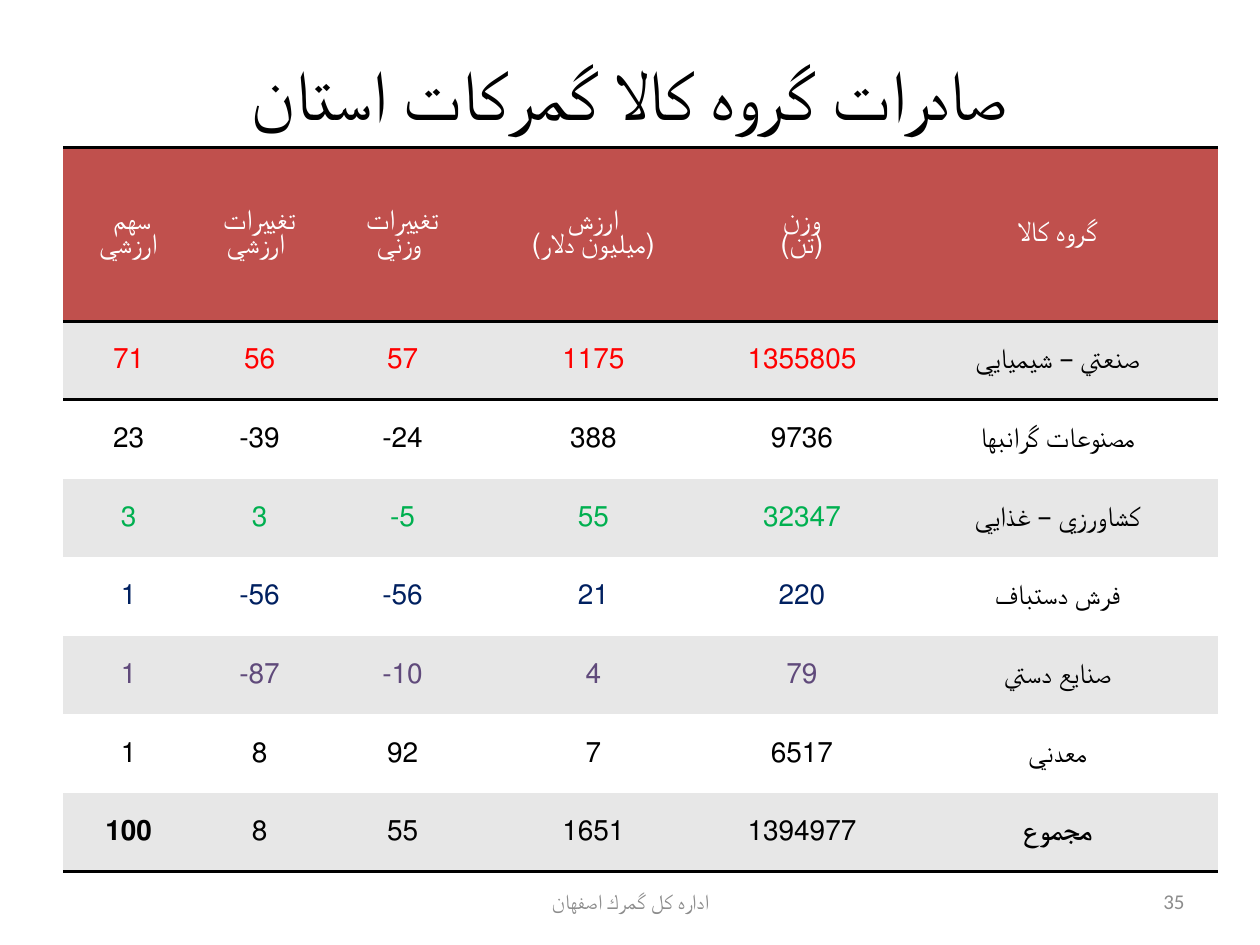
import pptx
import pptx.util
import pptx.dml.color
import pptx.enum.text
import pptx.oxml
import pptx.oxml.ns

Inches = pptx.util.Inches
Pt = pptx.util.Pt
align = pptx.enum.text.PP_ALIGN
middle = pptx.enum.text.MSO_ANCHOR.MIDDLE
ns = pptx.oxml.ns.nsdecls("a")


def paint(hue):
    return pptx.dml.color.RGBColor.from_string(hue)


def style(frame, size, face, hue, side=align.CENTER, rtl=True):
    for para in frame.paragraphs:
        para.alignment = side
        if rtl:
            para._p.get_or_add_pPr().set("rtl", "1")
        for run in para.runs:
            run.font.size = Pt(size)
            run.font.name = face
            run.font.color.rgb = paint(hue)


deck = pptx.Presentation()
deck.slide_width, deck.slide_height = Inches(10), Inches(7.5)
slide = deck.slides.add_slide(deck.slide_layouts[6])

labels = [
    ("صادرات گروه كالا گمركات استان", 0.5, 0.3, 9, 0.87, 40, "000000", align.CENTER, True),
    ("35", 7.17, 6.95, 2.33, 0.4, 12, "8C8C8C", align.RIGHT, False),
    ("اداره كل گمرك اصفهان", 3.42, 6.95, 3.17, 0.4, 12, "8C8C8C", align.CENTER, False),
]
for text, left, top, width, height, size, hue, side, rtl in labels:
    box = slide.shapes.add_textbox(Inches(left), Inches(top), Inches(width), Inches(height))
    frame = box.text_frame
    frame.word_wrap = True
    frame.vertical_anchor = middle
    frame.text = text
    style(frame, size, "Calibri", hue, side, rtl)

rows = [
    ["سهم \nارزشي", "تغييرات\n ارزشي", "تغييرات\n وزني", "ارزش\n(ميليون دلار)", "وزن\n(تن)", "گروه كالا"],
    ["71", "56", "57", "1175", "1355805", "صنعتي – شيميايي"],
    ["23", "39-", "24-", "388", "9736", "مصنوعات گرانبها"],
    ["3", "3", "5-", "55", "32347", "كشاورزي – غذايي"],
    ["1", "56-", "56-", "21", "220", "فرش دستباف"],
    ["1", "87-", "10-", "4", "79", "صنايع دستي"],
    ["1", "8", "92", "7", "6517", "معدني"],
    ["100", "8", "55", "1651", "1394977", "مجموع"],
]
hues = ["FFFFFF", "FF0000", "000000", "00B050", "002060", "604A7B", "000000", "000000"]
widths = [1.04, 1.04, 1.23, 1.8, 1.51, 2.55]
last = len(rows) - 1
head = 1.38

table = slide.shapes.add_table(
    len(rows), len(widths), Inches(0.5), Inches(1.17), Inches(9.17), Inches(5.75)).table
table._tbl.tblPr.find(pptx.oxml.ns.qn("a:tableStyleId")).text = "{2D5ABB26-0587-4C30-8999-92F81FD0307C}"
for col, width in zip(table.columns, widths):
    col.width = Inches(width)

for r, row in enumerate(rows):
    table.rows[r].height = Inches(head if r == 0 else (5.75 - head) / last)
    fill = "C0504D" if r == 0 else "E7E7E7" if r % 2 else "FFFFFF"
    edges = {0: ["lnT", "lnB"], 1: ["lnT"], last: ["lnB"]}.get(r, [])
    for c, text in enumerate(row):
        cell = table.cell(r, c)
        cell.vertical_anchor = middle
        cell.fill.solid()
        cell.fill.fore_color.rgb = paint(fill)
        cell.text_frame.text = text
        hue = "000000" if r and c == len(row) - 1 else hues[r]
        style(cell.text_frame, 16, "Arial", hue)
        for para in cell.text_frame.paragraphs:
            if r == 0:
                para.line_spacing = 0.87
            para.runs[0].font.bold = r == last and c in (0, len(row) - 1)
        for i, edge in enumerate(edges):
            line = pptx.oxml.parse_xml(
                f'<a:{edge} {ns} w="{Pt(2)}"><a:solidFill><a:srgbClr val="000000"/></a:solidFill></a:{edge}>')
            cell._tc.get_or_add_tcPr().insert(i, line)

deck.save("out.pptx")
